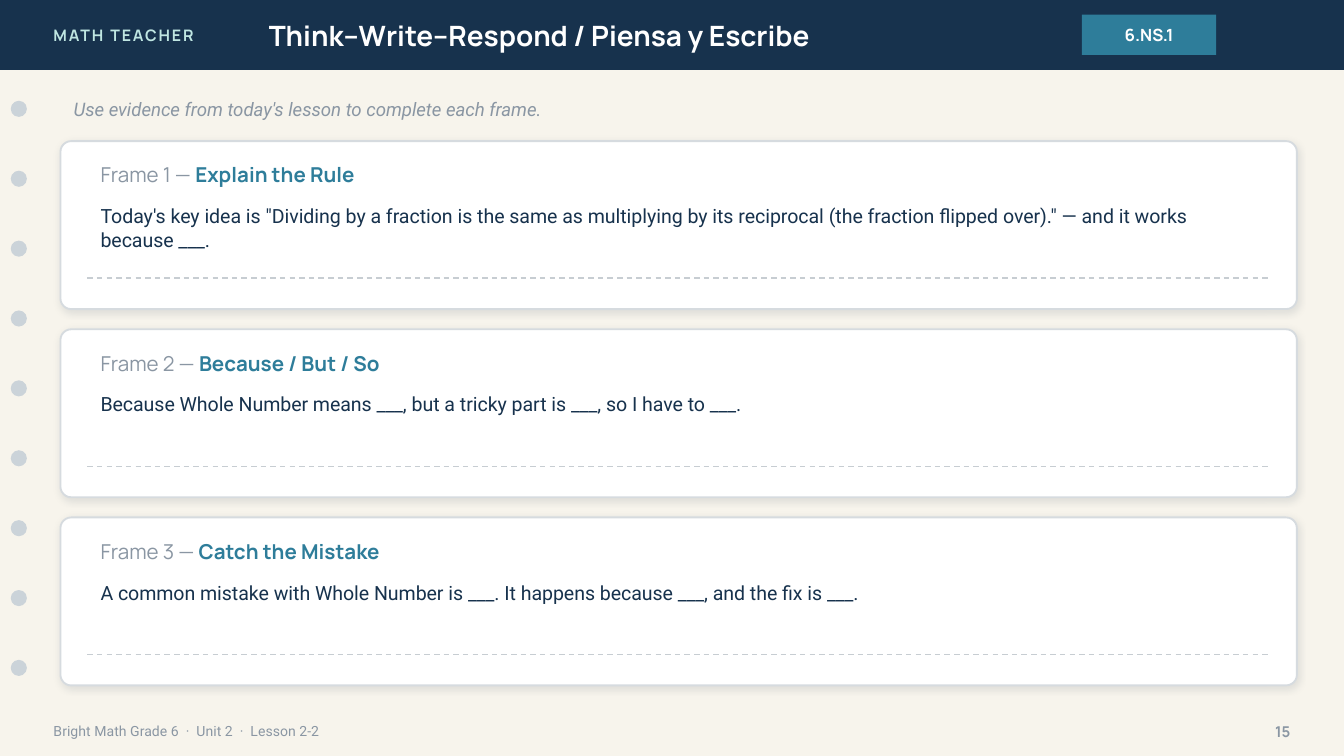
from dataclasses import dataclass
from typing import NamedTuple

from lxml.etree import SubElement
from pptx import Presentation
from pptx.dml.color import RGBColor
from pptx.enum.dml import MSO_LINE
from pptx.enum.shapes import MSO_CONNECTOR, MSO_SHAPE
from pptx.enum.text import MSO_ANCHOR, MSO_AUTO_SIZE, PP_ALIGN
from pptx.oxml.ns import qn
from pptx.util import Inches, Pt

NAVY, TEAL, MINT = "17324D", "2E7D9A", "BFE6E2"
GREY, WHITE, CREAM = "8A96A3", "FFFFFF", "F7F4EC"
HOLE, CARD_EDGE, RULE, SHADOW = "CBD3D9", "D6DBDF", "C7CDD2", "1C2E42"
HEADING, BODY = "Manrope", "Roboto"

SLIDE_WIDTH = 10
SLIDE_HEIGHT = SLIDE_WIDTH * 9 / 16
HEADER_HEIGHT = 0.52
HOLE_COUNT, HOLE_TOP, HOLE_STEP, HOLE_SIZE = 9, 0.75, 0.52, 0.12
CARD_LEFT, CARD_TOP, CARD_WIDTH, CARD_HEIGHT, CARD_STEP = 0.45, 1.05, 9.2, 1.25, 1.4
CARD_PADDING, CARD_RADIUS = 0.2, 0.08


class Box(NamedTuple):
    left: float
    top: float
    width: float
    height: float

    def lengths(self) -> list:
        return [Inches(value) for value in self]


@dataclass
class Run:
    text: str
    size: float
    color: str
    font: str = HEADING
    bold: bool = False
    italic: bool = False
    spacing: float = 0


@dataclass
class Frame:
    name: str
    prompt: str


FRAMES = [
    Frame("Explain the Rule",
          'Today\'s key idea is "Dividing by a fraction is the same as multiplying by its '
          'reciprocal (the fraction flipped over)." — and it works because ___.'),
    Frame("Because / But / So",
          "Because Whole Number means ___, but a tricky part is ___, so I have to ___."),
    Frame("Catch the Mistake",
          "A common mistake with Whole Number is ___. It happens because ___, "
          "and the fix is ___."),
]


def rgb(color: str) -> RGBColor:
    return RGBColor.from_string(color)


def write(shape, runs: list[Run], align=PP_ALIGN.LEFT, anchor=MSO_ANCHOR.MIDDLE) -> None:
    text_frame = shape.text_frame
    text_frame.word_wrap = True
    text_frame.auto_size = MSO_AUTO_SIZE.NONE
    text_frame.vertical_anchor = anchor
    paragraph = text_frame.paragraphs[0]
    paragraph.alignment = align
    for item in runs:
        run = paragraph.add_run()
        run.text = item.text
        run.font.name = item.font
        run.font.size = Pt(item.size)
        run.font.bold = item.bold
        run.font.italic = item.italic
        run.font.color.rgb = rgb(item.color)
        if item.spacing:
            run.font._element.set("spc", str(int(item.spacing * 100)))


def add_text(slide, box: Box, runs: list[Run], **layout) -> None:
    write(slide.shapes.add_textbox(*box.lengths()), runs, **layout)


def add_filled(slide, kind, box: Box, fill: str, line: str | None = None):
    shape = slide.shapes.add_shape(kind, *box.lengths())
    shape.fill.solid()
    shape.fill.fore_color.rgb = rgb(fill)
    if line:
        shape.line.color.rgb = rgb(line)
        shape.line.width = Pt(1)
    else:
        shape.line.fill.background()
    shape.shadow.inherit = False
    return shape


def add_soft_shadow(shape) -> None:
    effects = shape._element.spPr.find(qn("a:effectLst"))
    shadow = SubElement(effects, qn("a:outerShdw"), blurRad=str(Pt(4)), dist=str(Pt(1)),
                        dir="5400000", algn="bl", rotWithShape="0")
    color = SubElement(shadow, qn("a:srgbClr"), val=SHADOW)
    SubElement(color, qn("a:alpha"), val="10000")


def add_dashed_rule(slide, left: float, right: float, y: float) -> None:
    rule = slide.shapes.add_connector(
        MSO_CONNECTOR.STRAIGHT, Inches(left), Inches(y), Inches(right), Inches(y))
    rule.line.color.rgb = rgb(RULE)
    rule.line.width = Pt(0.75)
    rule.line.dash_style = MSO_LINE.DASH
    SubElement(rule._element.spPr, qn("a:effectLst"))


def add_header(slide) -> None:
    add_filled(slide, MSO_SHAPE.RECTANGLE, Box(0, 0, SLIDE_WIDTH, HEADER_HEIGHT), NAVY)
    add_text(slide, Box(0.3, 0, 2.4, HEADER_HEIGHT),
             [Run("MATH TEACHER", 8.5, MINT, bold=True, spacing=1)])
    title = slide.shapes.title
    title.left, title.top, title.width, title.height = Box(1.9, 0, 5.6, HEADER_HEIGHT).lengths()
    write(title, [Run("Think–Write–Respond / Piensa y Escribe", 15, WHITE, bold=True)])
    # The placeholder starts at the back; bring it in front of the header bar.
    slide.shapes._spTree.append(title._element)
    badge = add_filled(slide, MSO_SHAPE.RECTANGLE, Box(8.05, 0.11, 1, 0.3), TEAL)
    write(badge, [Run("6.NS.1", 9, WHITE, bold=True)], align=PP_ALIGN.CENTER)


def add_binder_holes(slide) -> None:
    for index in range(HOLE_COUNT):
        box = Box(0.08, HOLE_TOP + index * HOLE_STEP, HOLE_SIZE, HOLE_SIZE)
        add_filled(slide, MSO_SHAPE.OVAL, box, HOLE)


def add_footer(slide) -> None:
    add_text(slide, Box(0.3, 5.3, 7, 0.28),
             [Run("Bright Math Grade 6  ·  Unit 2  ·  Lesson 2-2", 7.5, GREY, BODY)])
    add_text(slide, Box(9.2, 5.3, 0.5, 0.28), [Run("15", 8, GREY, bold=True)],
             align=PP_ALIGN.RIGHT)


def add_frame_card(slide, number: int, frame: Frame) -> None:
    top = CARD_TOP + (number - 1) * CARD_STEP
    left, width = CARD_LEFT + CARD_PADDING, CARD_WIDTH - 2 * CARD_PADDING
    card = add_filled(slide, MSO_SHAPE.ROUNDED_RECTANGLE,
                      Box(CARD_LEFT, top, CARD_WIDTH, CARD_HEIGHT), WHITE, CARD_EDGE)
    card.adjustments[0] = CARD_RADIUS / CARD_HEIGHT
    add_soft_shadow(card)
    add_text(slide, Box(left, top + 0.1, width, 0.3),
             [Run(f"Frame {number} — ", 11, GREY), Run(frame.name, 11, TEAL, bold=True)])
    add_text(slide, Box(left, top + 0.42, width, 0.4),
             [Run(frame.prompt, 10.5, NAVY, BODY)], anchor=MSO_ANCHOR.TOP)
    add_dashed_rule(slide, left, left + width, top + 1.02)


def main() -> None:
    presentation = Presentation()
    presentation.slide_width = Inches(SLIDE_WIDTH)
    presentation.slide_height = Inches(SLIDE_HEIGHT)
    slide = presentation.slides.add_slide(presentation.slide_layouts.get_by_name("Title Only"))
    slide.background.fill.solid()
    slide.background.fill.fore_color.rgb = rgb(CREAM)

    add_header(slide)
    add_binder_holes(slide)
    add_footer(slide)
    add_text(slide, Box(CARD_LEFT, 0.66, CARD_WIDTH, 0.3),
             [Run("Use evidence from today's lesson to complete each frame.",
                  10, GREY, BODY, italic=True)])
    for number, frame in enumerate(FRAMES, start=1):
        add_frame_card(slide, number, frame)
    presentation.save("out.pptx")


if __name__ == "__main__":
    main()
